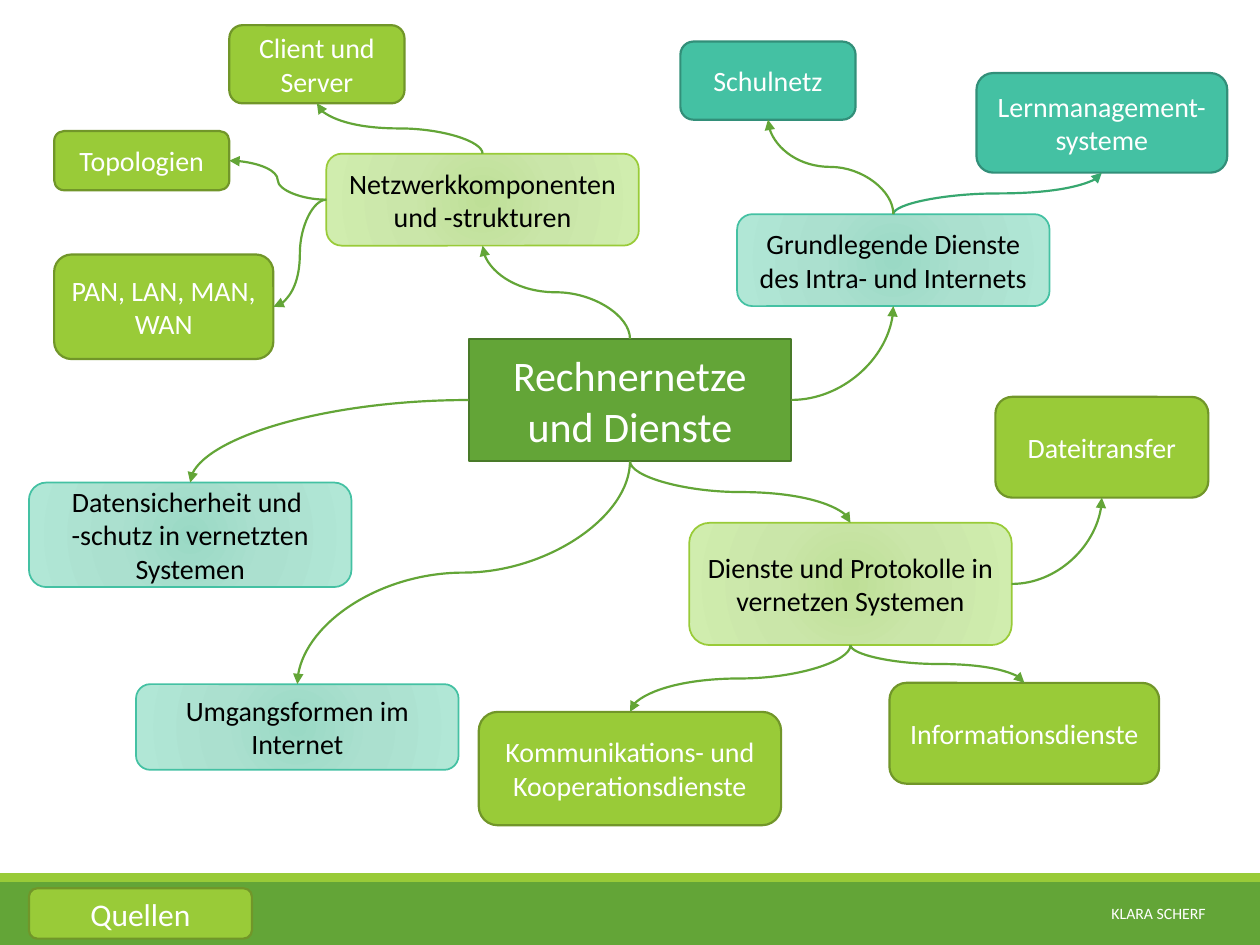
"""Build a mind map slide about computer networks and their services."""
from pptx import Presentation
from pptx import util as u
from pptx.dml.color import RGBColor
from pptx.enum import shapes, text
from pptx.oxml import parse_xml
from pptx.oxml.ns import nsdecls

TOP, LEFT, BOTTOM, RIGHT = range(4)
GREEN, LIME, TEAL, WHITE, BLACK = "63A537", "99CB38", "44C1A3", "FFFFFF", "000000"
RECT = shapes.MSO_SHAPE.RECTANGLE
ROUND = shapes.MSO_SHAPE.ROUNDED_RECTANGLE

# style: fill or gradient stops, line colour, line width, text colour
STYLES = {
    "centre": (GREEN, "497A29", 1.25, WHITE),
    "lime": (LIME, "719629", 1.25, WHITE),
    "teal": (TEAL, "328F79", 1.25, WHITE),
    "pale lime": (("BEDF97", "CAE6A9", "D0EDAE"), LIME, 1, BLACK),
    "pale teal": (("9AD9C5", "ABE0CF", "B1E7D6"), TEAL, 1, BLACK),
}


def color(value):
    return RGBColor.from_string(value)


def write(box, lines, size, ink):
    frame = box.text_frame
    frame.word_wrap = True
    frame.vertical_anchor = text.MSO_ANCHOR.MIDDLE
    for index, line in enumerate(lines):
        para = frame.add_paragraph() if index else frame.paragraphs[0]
        para.alignment = text.PP_ALIGN.CENTER
        span = para.add_run()
        span.text = line
        span.font.size = u.Pt(size)
        span.font.name = "Calibri"
        span.font.color.rgb = color(ink)


deck = Presentation()
deck.slide_width, deck.slide_height = u.Inches(10), u.Inches(7.5)
page = deck.slides.add_slide(deck.slide_layouts[6])

for top, height, fill in [(7, 0.5, GREEN), (6.93, 0.07, LIME)]:
    band = page.shapes.add_shape(RECT, 0, u.Inches(top), u.Inches(10), u.Inches(height))
    band.shadow.inherit = False
    band.fill.solid()
    band.fill.fore_color.rgb = color(fill)
    band.line.fill.background()

nodes = [
    ("root", "centre", 3.72, 2.69, 2.56, 0.97, 24, ["Rechnernetze und Dienste"]),
    ("client", "lime", 1.82, 0.2, 1.39, 0.62, 16, ["Client und Server"]),
    ("topology", "lime", 0.43, 1.04, 1.39, 0.47, 16, ["Topologien"]),
    ("areas", "lime", 0.43, 2.02, 1.74, 0.83, 16, ["PAN, LAN, MAN, WAN"]),
    ("components", "pale lime", 2.59, 1.22, 2.48, 0.73, 16,
     ["Netzwerkkomponenten und -strukturen"]),
    ("information", "lime", 7.06, 5.42, 2.14, 0.8, 16, ["Informationsdienste"]),
    ("communication", "lime", 3.8, 5.65, 2.4, 0.9, 16,
     ["Kommunikations- und Kooperationsdienste"]),
    ("protocols", "pale lime", 5.47, 4.15, 2.56, 0.97, 16,
     ["Dienste und Protokolle in vernetzen Systemen"]),
    ("transfer", "lime", 7.9, 3.15, 1.69, 0.8, 16, ["Dateitransfer"]),
    ("basics", "pale teal", 5.85, 1.7, 2.48, 0.73, 16,
     ["Grundlegende Dienste des Intra- und Internets"]),
    ("security", "pale teal", 0.23, 3.83, 2.56, 0.83, 16,
     ["Datensicherheit und ", "-schutz in vernetzten Systemen"]),
    ("school", "teal", 5.4, 0.33, 1.39, 0.62, 16, ["Schulnetz"]),
    ("learning", "teal", 7.75, 0.58, 1.99, 0.79, 16, ["Lernmanagement-systeme"]),
    ("manners", "pale teal", 1.08, 5.43, 2.56, 0.68, 16, ["Umgangsformen im Internet"]),
    ("sources", "lime", 0.23, 7.05, 1.77, 0.4, 18, ["Quellen"]),
]
boxes = {}
for name, style, left, top, width, height, size, lines in nodes:
    fill, edge, weight, ink = STYLES[style]
    box = page.shapes.add_shape(RECT if name == "root" else ROUND, u.Inches(left),
                                u.Inches(top), u.Inches(width), u.Inches(height))
    box.shadow.inherit = False
    if isinstance(fill, str):
        box.fill.solid()
        box.fill.fore_color.rgb = color(fill)
    else:
        stops = "".join(f'<a:gs pos="{pos}"><a:srgbClr val="{stop}"/></a:gs>'
                        for pos, stop in zip((0, 45000, 100000), fill))
        box._element.spPr.insert(2, parse_xml(
            f'<a:gradFill {nsdecls("a")} rotWithShape="1"><a:gsLst>{stops}</a:gsLst>'
            '<a:path path="circle"><a:fillToRect l="100000" t="100000" r="100000" '
            'b="100000"/></a:path></a:gradFill>'))
    box.line.color.rgb = color(edge)
    box.line.width = u.Pt(weight)
    write(box, lines, size, ink)
    boxes[name] = box

links = [
    ("root", TOP, "components", BOTTOM, GREEN),
    ("components", LEFT, "areas", RIGHT, GREEN),
    ("components", LEFT, "topology", RIGHT, GREEN),
    ("components", TOP, "client", BOTTOM, GREEN),
    ("root", BOTTOM, "protocols", TOP, GREEN),
    ("protocols", RIGHT, "transfer", BOTTOM, GREEN),
    ("protocols", BOTTOM, "information", TOP, GREEN),
    ("protocols", BOTTOM, "communication", TOP, GREEN),
    ("basics", TOP, "learning", BOTTOM, "37A76F"),
    ("basics", TOP, "school", BOTTOM, GREEN),
    ("root", RIGHT, "basics", BOTTOM, GREEN),
    ("root", LEFT, "security", TOP, GREEN),
    ("root", BOTTOM, "manners", TOP, GREEN),
]
for start, start_side, end, end_side, ink in links:
    arrow = page.shapes.add_connector(shapes.MSO_CONNECTOR.CURVE, 0, 0, 0, 0)
    arrow.begin_connect(boxes[start], start_side)
    arrow.end_connect(boxes[end], end_side)
    properties = arrow._element.spPr
    if start_side in (TOP, BOTTOM):
        across = arrow.end_x - arrow.begin_x
        down = arrow.end_y > arrow.begin_y
        width, height = arrow.width, arrow.height
        arrow.left += (width - height) // 2
        arrow.top += (height - width) // 2
        arrow.width, arrow.height = height, width
        frame = properties.xfrm
        frame.set("rot", "5400000" if down else "16200000")
        frame.set("flipH", "0")
        frame.set("flipV", "1" if (across > 0) == down else "0")
    elif end_side in (TOP, BOTTOM):
        properties.prstGeom.set("prst", "curvedConnector2")
    arrow.line.color.rgb = color(ink)
    arrow.line.width = u.Pt(1.25)
    arrow.line._get_or_add_ln().append(
        parse_xml(f'<a:tailEnd {nsdecls("a")} type="triangle"/>'))
    properties.append(parse_xml(f'<a:effectLst {nsdecls("a")}/>'))

author = page.shapes.add_textbox(u.Inches(8.31), u.Inches(7.05),
                                 u.Inches(1.77), u.Inches(0.4))
write(author, ["KLARA SCHERF"], 9, WHITE)

deck.save("out.pptx")
